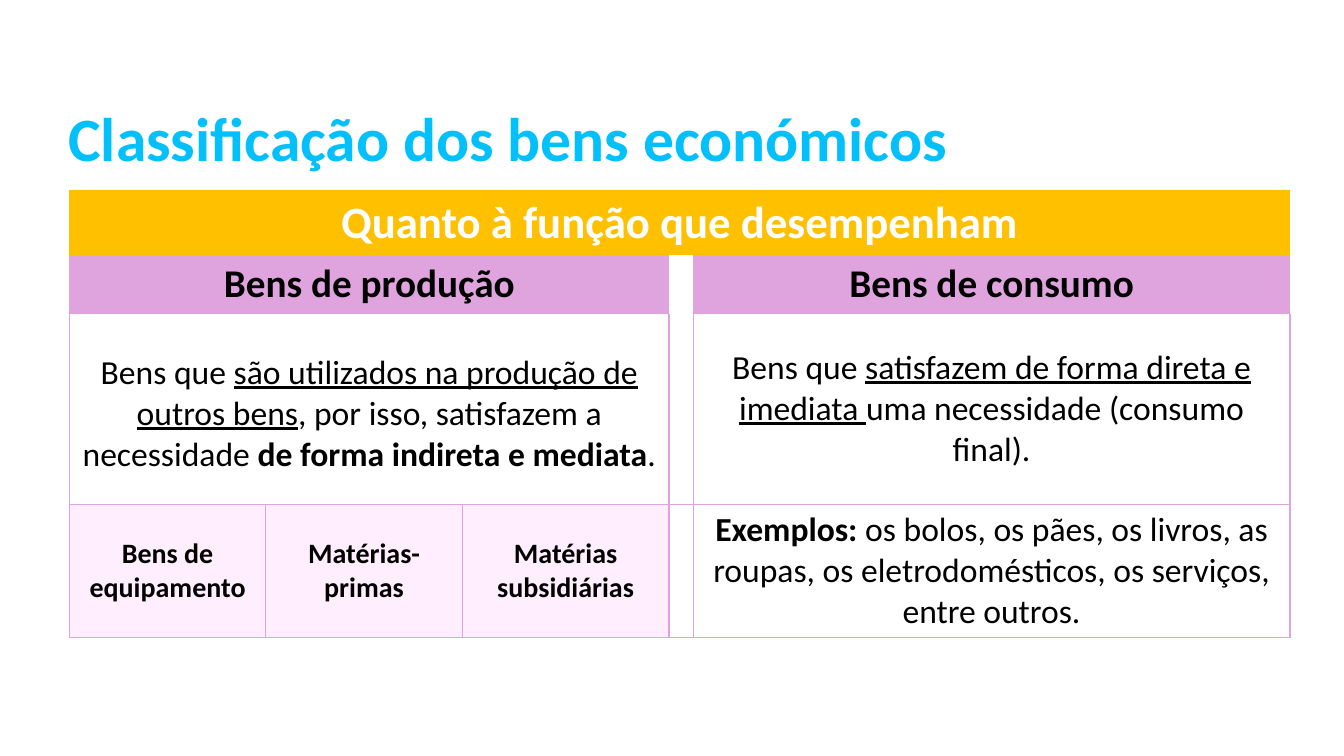
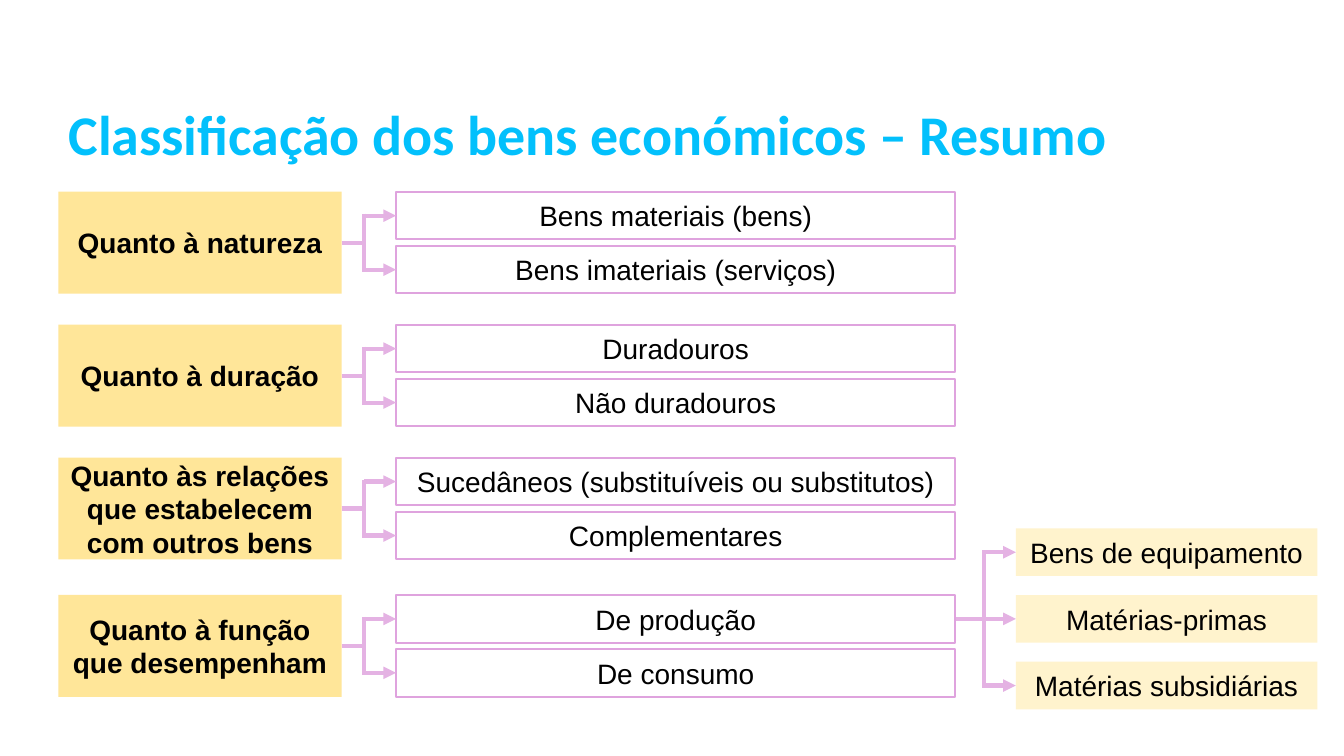
from dataclasses import dataclass
from typing import Optional

from lxml import etree
from pptx import Presentation
from pptx import util as u
from pptx.dml.color import RGBColor
from pptx.enum import shapes, text
from pptx.oxml import ns


@dataclass(frozen=True)
class Theme:
    title: str = "02C0FC"
    header: str = "FFC000"
    category: str = "FFE699"
    detail: str = "FFF3CD"
    accent: str = "DFA3DE"
    connector: str = "E4B2E3"
    tint: str = "FFEEFD"
    light: str = "FFFFFF"
    dark: str = "000000"
    table_font: str = "Calibri"
    diagram_font: str = "Arial"
    title_size: int = 44
    summary_title_size: int = 40
    header_size: int = 32
    subheader_size: int = 28
    body_size: int = 24
    label_size: int = 20


THEME = Theme()


@dataclass(frozen=True)
class Run:
    text: str
    bold: bool = False
    underline: bool = False


@dataclass(frozen=True)
class TableEntry:
    row: int
    column: int
    runs: tuple[Run, ...] = ()
    span: int = 1
    size: int = THEME.body_size
    color: str = THEME.dark
    fill: Optional[str] = None
    lowered: float = 0


@dataclass(frozen=True)
class BoxStyle:
    left: float
    width: float
    height: float
    gap: float = 0
    fill: Optional[str] = None
    line: Optional[str] = None
    bold: bool = False


@dataclass(frozen=True)
class Category:
    top: float
    label: str
    options: tuple[str, ...]
    details: tuple[str, ...] = ()


CATEGORY_BOX = BoxStyle(1.47, 7.14, 2.57, fill=THEME.category, bold=True)
OPTION_BOX = BoxStyle(9.98, 14.1, 1.2, gap=0.16, line=THEME.accent)
DETAIL_BOX = BoxStyle(25.6, 7.6, 1.2, gap=0.48, fill=THEME.detail)
TRUNK_OFFSET = u.Cm(0.8)
TRUNK_CAP = u.Cm(0.05)

COLUMN_WIDTHS = (4.95, 4.95, 5.21, 0.6, 15.04)
ROW_HEIGHTS = (1.61, 1.44, 4.8, 3.3)
ROW_BORDERS = ("", "", "LRB", "LRTB")

TABLE_ENTRIES = (
    TableEntry(0, 0, (Run("Quanto à função que desempenham", True),), span=5,
               size=THEME.header_size, color=THEME.light, fill=THEME.header),
    TableEntry(1, 0, (Run("Bens de produção", True),), span=3,
               size=THEME.subheader_size, fill=THEME.accent),
    TableEntry(1, 3),
    TableEntry(1, 4, (Run("Bens de consumo", True),),
               size=THEME.subheader_size, fill=THEME.accent),
    TableEntry(2, 0, (
        Run("Bens que "),
        Run("são utilizados na produção de outros bens", underline=True),
        Run(", por isso, satisfazem a necessidade "),
        Run("de forma indireta e mediata", True),
        Run("."),
    ), span=3, lowered=0.25),
    TableEntry(2, 3),
    TableEntry(2, 4, (
        Run("Bens que "),
        Run("satisfazem de forma direta e imediata ", underline=True),
        Run("uma necessidade (consumo final)."),
    )),
    *(TableEntry(3, column, (Run(label, True),),
                 size=THEME.label_size, fill=THEME.tint)
      for column, label in enumerate(
          ("Bens de equipamento", "Matérias-primas", "Matérias subsidiárias"))),
    TableEntry(3, 3),
    TableEntry(3, 4, (
        Run("Exemplos:", True),
        Run(" os bolos, os pães, os livros, as roupas, os eletrodomésticos, "
            "os serviços, entre outros."),
    )),
)

CATEGORIES = (
    Category(4.83, "Quanto à natureza",
             ("Bens materiais (bens)", "Bens imateriais (serviços)")),
    Category(8.18, "Quanto à duração", ("Duradouros", "Não duradouros")),
    Category(11.53, "Quanto às relações que estabelecem com outros bens",
             ("Sucedâneos (substituíveis ou substitutos)", "Complementares")),
    Category(14.99, "Quanto à função que desempenham",
             ("De produção", "De consumo"),
             ("Bens de equipamento", "Matérias-primas", "Matérias subsidiárias")),
)


def write_text(paragraph, content: str, *, size: int, font: str,
               color: str = THEME.dark, bold: bool = False,
               underline: bool = False, align=text.PP_ALIGN.CENTER) -> None:
    paragraph.alignment = align
    run = paragraph.add_run()
    run.text = content
    run.font.name = font
    run.font.size = u.Pt(size)
    run.font.bold = bold
    run.font.underline = underline
    run.font.color.rgb = RGBColor.from_string(color)


def set_fill(fill, color: Optional[str]) -> None:
    if color is None:
        fill.background()
    else:
        fill.solid()
        fill.fore_color.rgb = RGBColor.from_string(color)


def add_titled_slide(presentation, title: str, size: int):
    slide = presentation.slides.add_slide(presentation.slide_layouts[5])
    shape = slide.shapes.title
    shape.left, shape.top = u.Cm(1.47), u.Cm(2.39)
    shape.width, shape.height = u.Cm(28.7), u.Cm(2.1)
    frame = shape.text_frame
    frame.auto_size = text.MSO_AUTO_SIZE.NONE
    frame.vertical_anchor = text.MSO_ANCHOR.TOP
    write_text(frame.paragraphs[0], title, size=size, font=THEME.table_font,
               color=THEME.title, bold=True, align=text.PP_ALIGN.LEFT)
    return slide


def set_borders(cell, visible: str) -> None:
    properties = cell._tc.get_or_add_tcPr()
    for position, side in enumerate("LRTB"):
        line = etree.Element(ns.qn(f"a:ln{side}"), w=str(u.Pt(1)))
        if side in visible:
            fill = etree.SubElement(line, ns.qn("a:solidFill"))
            etree.SubElement(fill, ns.qn("a:srgbClr"), val=THEME.accent)
        else:
            etree.SubElement(line, ns.qn("a:noFill"))
        properties.insert(position, line)


def fill_entry(table, entry: TableEntry) -> None:
    cell = table.cell(entry.row, entry.column)
    last = entry.column + entry.span - 1
    if entry.span > 1:
        cell.merge(table.cell(entry.row, last))
    for column in range(entry.column, last + 1):
        part = table.cell(entry.row, column)
        set_fill(part.fill, entry.fill)
        set_borders(part, ROW_BORDERS[entry.row])
    cell.vertical_anchor = text.MSO_ANCHOR.MIDDLE
    cell.margin_top = u.Cm(0.13 + entry.lowered)
    for run in entry.runs:
        write_text(cell.text_frame.paragraphs[0], run.text, size=entry.size,
                   font=THEME.table_font, color=entry.color,
                   bold=run.bold, underline=run.underline)


def build_function_slide(presentation) -> None:
    slide = add_titled_slide(presentation, "Classificação dos bens económicos",
                             THEME.title_size)
    table = slide.shapes.add_table(
        len(ROW_HEIGHTS), len(COLUMN_WIDTHS), u.Cm(1.75), u.Cm(4.8),
        u.Cm(sum(COLUMN_WIDTHS)), u.Cm(sum(ROW_HEIGHTS))).table
    table.first_row = False
    table.horz_banding = False
    for column, width in zip(table.columns, COLUMN_WIDTHS):
        column.width = u.Cm(width)
    for row, height in zip(table.rows, ROW_HEIGHTS):
        row.height = u.Cm(height)
    for entry in TABLE_ENTRIES:
        fill_entry(table, entry)


def add_box(slide, label: str, top: int, style: BoxStyle):
    shape = slide.shapes.add_shape(
        shapes.MSO_SHAPE.RECTANGLE, u.Cm(style.left), top,
        u.Cm(style.width), u.Cm(style.height))
    shape.shadow.inherit = False
    set_fill(shape.fill, style.fill)
    set_fill(shape.line.fill, style.line)
    if style.line:
        shape.line.width = u.Pt(1.5)
    frame = shape.text_frame
    frame.word_wrap = True
    frame.vertical_anchor = text.MSO_ANCHOR.MIDDLE
    write_text(frame.paragraphs[0], label, size=THEME.label_size,
               font=THEME.diagram_font, bold=style.bold)
    return shape


def add_line(slide, start: tuple[int, int], end: tuple[int, int],
             arrow: bool = False):
    connector = slide.shapes.add_connector(
        shapes.MSO_CONNECTOR.STRAIGHT, *start, *end)
    connector.line.width = u.Pt(3)
    connector.line.color.rgb = RGBColor.from_string(THEME.connector)
    if arrow:
        etree.SubElement(connector.line._get_or_add_ln(), ns.qn("a:tailEnd"),
                         type="triangle")
    etree.SubElement(connector._element.spPr, ns.qn("a:effectLst"))
    return connector


def middle(shape) -> int:
    return shape.top + shape.height // 2


def add_branch(slide, parent, labels: tuple[str, ...], style: BoxStyle) -> list:
    pitch = u.Cm(style.height + style.gap)
    stack_height = pitch * len(labels) - u.Cm(style.gap)
    top = middle(parent) - stack_height // 2
    children = [add_box(slide, label, top + index * pitch, style)
                for index, label in enumerate(labels)]
    trunk = u.Cm(style.left) - TRUNK_OFFSET
    add_line(slide, (trunk, middle(children[0]) - TRUNK_CAP),
             (trunk, middle(children[-1]) + TRUNK_CAP))
    stem = add_line(slide, (parent.left + parent.width, middle(parent)),
                    (trunk, middle(parent)))
    stem.begin_connect(parent, 3)
    for child in children:
        arrow = add_line(slide, (trunk, middle(child)),
                         (child.left, middle(child)), arrow=True)
        arrow.end_connect(child, 1)
    return children


def build_summary_slide(presentation) -> None:
    slide = add_titled_slide(
        presentation, "Classificação dos bens económicos – Resumo",
        THEME.summary_title_size)
    for category in CATEGORIES:
        box = add_box(slide, category.label, u.Cm(category.top), CATEGORY_BOX)
        options = add_branch(slide, box, category.options, OPTION_BOX)
        if category.details:
            add_branch(slide, options[0], category.details, DETAIL_BOX)


def main() -> None:
    presentation = Presentation()
    presentation.slide_width = u.Cm(33.87)
    presentation.slide_height = u.Cm(19.05)
    build_function_slide(presentation)
    build_summary_slide(presentation)
    presentation.save("out.pptx")


if __name__ == "__main__":
    main()
